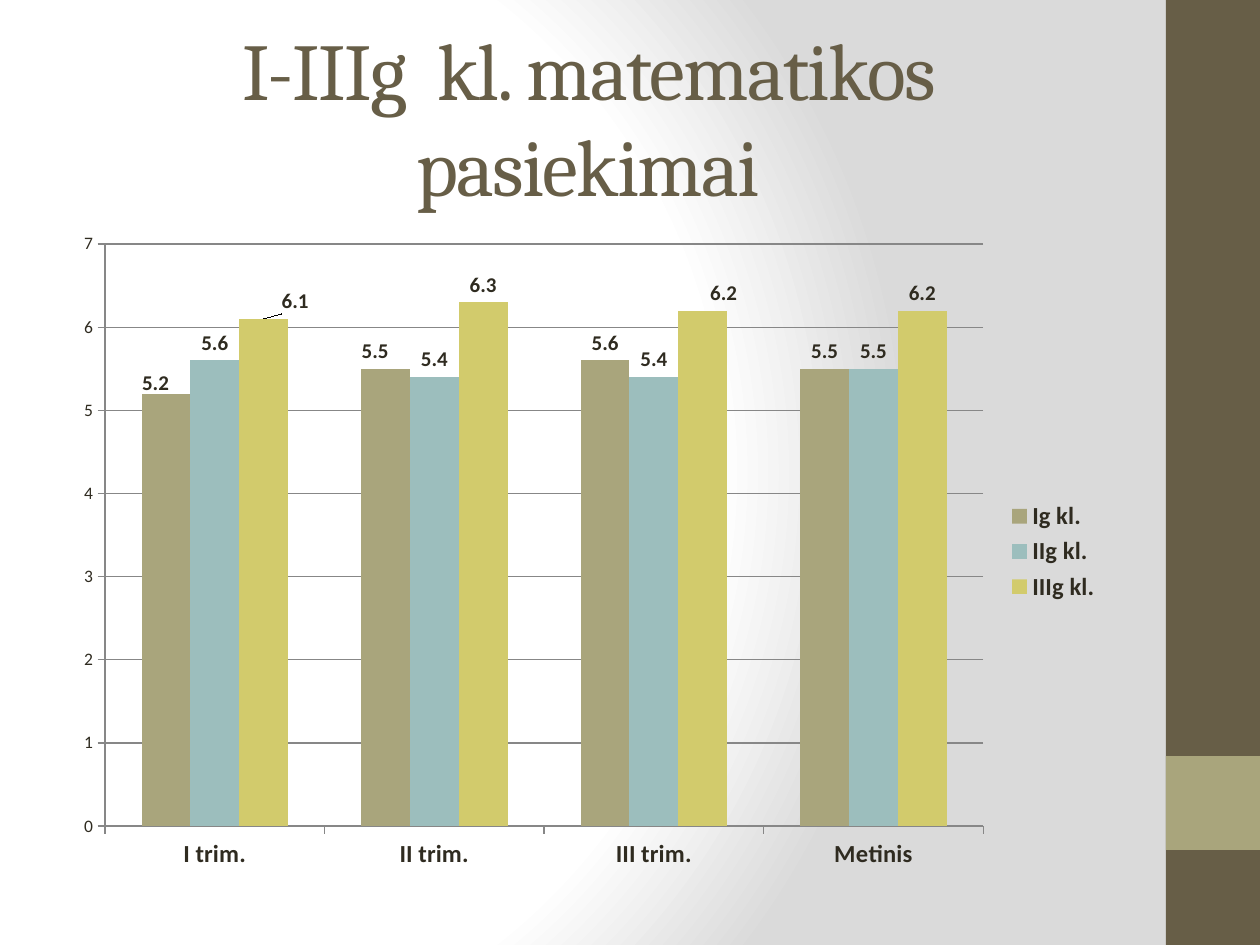
from pptx import Presentation, util as u
from pptx.chart.data import CategoryChartData
from pptx.dml.color import RGBColor
from pptx.enum import chart as ch, shapes, text
from pptx.oxml import parse_xml
from pptx.oxml.ns import nsdecls, qn

BROWN = RGBColor(0x67, 0x5E, 0x47)
OLIVE = RGBColor(0xA9, 0xA5, 0x7C)
TEAL = RGBColor(0x9C, 0xBE, 0xBD)
YELLOW = RGBColor(0xD2, 0xCB, 0x6C)
INK = RGBColor(0x2F, 0x2B, 0x20)
GREY = RGBColor(0x87, 0x87, 0x87)
WHITE = RGBColor(0xFF, 0xFF, 0xFF)
LIGHT_GREY = RGBColor(0xDA, 0xDA, 0xDA)

TERMS = ["I trim.", "II trim.", "III trim.", "Metinis"]
# class name, averages, colour, label shifts by term (fractions of the chart)
CLASSES = [
    ("Ig kl.", (5.2, 5.5, 5.6, 5.5), OLIVE, {0: (-0.01, 0.01), 1: (-0.01, 0)}),
    ("IIg kl.", (5.6, 5.4, 5.4, 5.5), TEAL, {}),
    ("IIIg kl.", (6.1, 6.3, 6.2, 6.2), YELLOW, {0: (0.03, 0), 2: (0.02, 0)}),
]


def px(n):
    return u.Emu(n * 914400 // 126)


def set_font(font, **values):
    color = values.pop("color", INK)
    for name, value in values.items():
        setattr(font, name, value)
    font.color.rgb = color


def paint_background(slide):
    slide.background.fill.solid()
    solid = slide.element.find(".//" + qn("p:bgPr")).find(qn("a:solidFill"))
    stops = "".join(
        f'<a:gs pos="{pos}"><a:srgbClr val="{color}"/></a:gs>'
        for pos, color in ((0, WHITE), (75000, WHITE), (100000, LIGHT_GREY)))
    solid.getparent().replace(solid, parse_xml(
        f'<a:gradFill rotWithShape="1" {nsdecls("a")}><a:gsLst>{stops}</a:gsLst>'
        '<a:path path="circle"><a:fillToRect l="20000" t="50000" r="100000" b="50000"/>'
        '</a:path></a:gradFill>'))


def add_side_band(slide, left, top, width, height):
    accent_top = top + height * 4 // 5
    for y, h, color in ((top, height, BROWN), (accent_top, width, OLIVE)):
        band = slide.shapes.add_shape(
            shapes.MSO_SHAPE.RECTANGLE, px(left), px(y), px(width), px(h))
        band.shadow.inherit = False
        band.fill.solid()
        band.fill.fore_color.rgb = color
        band.line.fill.background()


def place_title(slide, left, top, width, height):
    title = slide.shapes.title
    title.left, title.top, title.width, title.height = map(px, (left, top, width, height))
    frame = title.text_frame
    frame.text = "I-IIIg  kl. matematikos pasiekimai"
    frame.auto_size = text.MSO_AUTO_SIZE.NONE
    frame.vertical_anchor = text.MSO_ANCHOR.MIDDLE
    heading = frame.paragraphs[0]
    heading.alignment = text.PP_ALIGN.CENTER
    set_font(heading.runs[0].font, name="Cambria", size=u.Pt(46), color=BROWN)
    title.element.find(".//" + qn("a:rPr")).set("spc", "-100")


def shift_label(series_xml, term, dx, dy):
    for label in series_xml.iter(qn("c:dLbl")):
        index = label.find(qn("c:idx"))
        if index.get("val") == str(term):
            index.addnext(parse_xml(
                f'<c:layout {nsdecls("c")}><c:manualLayout>'
                f'<c:x val="{dx}"/><c:y val="{dy}"/></c:manualLayout></c:layout>'))


def style_axis(axis, **font):
    axis.major_tick_mark = ch.XL_TICK_MARK.OUTSIDE
    axis.minor_tick_mark = ch.XL_TICK_MARK.NONE
    axis.format.line.color.rgb = GREY
    set_font(axis.tick_labels.font, **font)


def add_results_chart(slide, left, top, width, height):
    data = CategoryChartData(number_format="General")
    data.categories = TERMS
    for name, averages, *_ in CLASSES:
        data.add_series(name, averages)
    chart = slide.shapes.add_chart(
        ch.XL_CHART_TYPE.COLUMN_CLUSTERED,
        *map(px, (left, top, width, height)), data).chart
    set_font(chart.font, name="Calibri", size=u.Pt(10))
    chart.has_title = False
    chart.has_legend = True
    chart.legend.position = ch.XL_LEGEND_POSITION.RIGHT
    chart.legend.include_in_layout = False
    set_font(chart.legend.font, size=u.Pt(14), bold=True)

    style_axis(chart.category_axis, size=u.Pt(14), bold=True)
    averages_axis = chart.value_axis
    style_axis(averages_axis, size=u.Pt(10))
    averages_axis.minimum_scale, averages_axis.maximum_scale = 0, 7
    averages_axis.major_unit = 1
    averages_axis.major_gridlines.format.line.color.rgb = GREY

    plot = chart.plots[0]
    plot.gap_width, plot.overlap = 150, 0
    plot.vary_by_categories = False
    all_series_xml = chart.element.findall(".//" + qn("c:ser"))
    for series, xml, (_, _, color, shifts) in zip(plot.series, all_series_xml, CLASSES):
        series.format.fill.solid()
        series.format.fill.fore_color.rgb = color
        series.data_labels.show_value = True
        labels = [series.data_labels]
        labels += [series.points[term].data_label for term in shifts]
        for label in labels:
            label.position = ch.XL_LABEL_POSITION.OUTSIDE_END
            set_font(label.font, size=u.Pt(12), bold=True)
        for term, (dx, dy) in shifts.items():
            shift_label(xml, term, dx, dy)


def main():
    deck = Presentation()
    deck.slide_width, deck.slide_height = px(1260), px(945)
    slide = deck.slides.add_slide(deck.slide_layouts[5])
    paint_background(slide)
    add_side_band(slide, 1166, 0, 94, 945)
    place_title(slide, 63, 38, 1050, 157)
    add_results_chart(slide, 63, 221, 1050, 661)
    deck.save("out.pptx")


if __name__ == "__main__":
    main()
